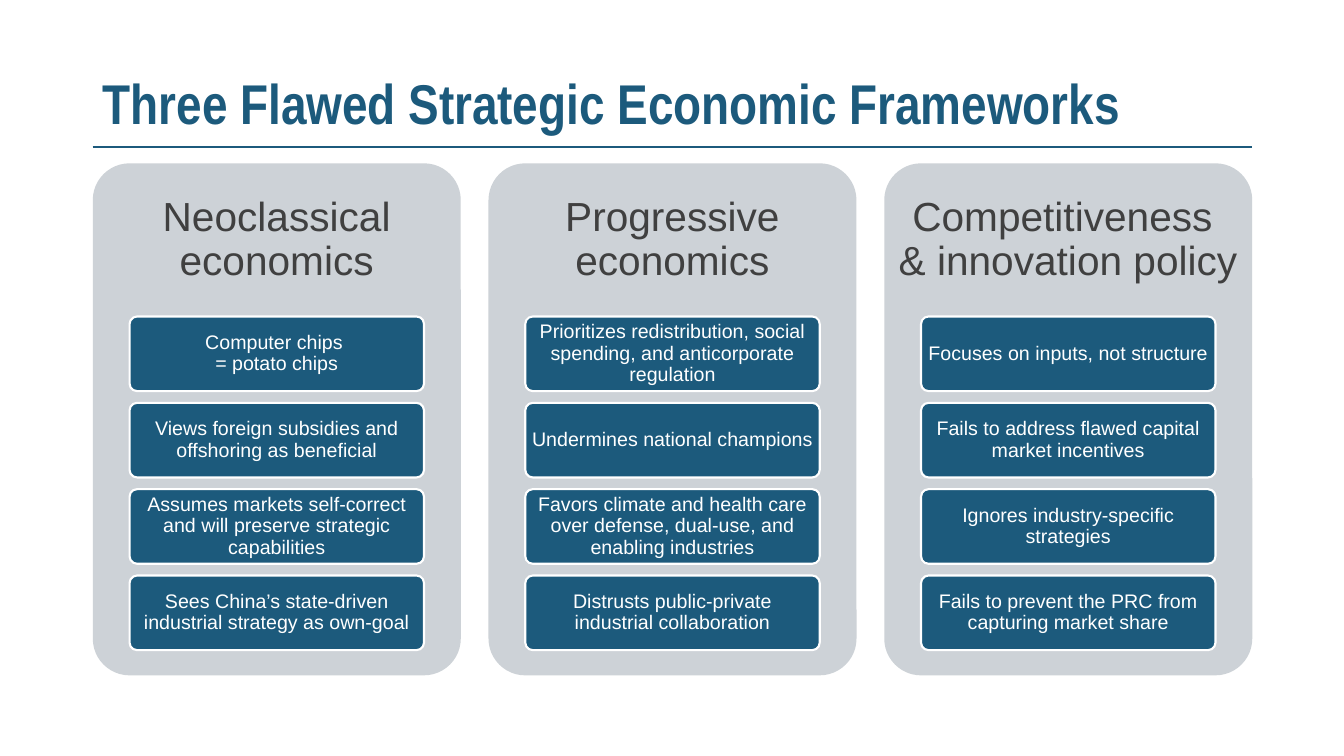
import lxml.etree
import pptx
import pptx.dml.color
import pptx.enum.shapes
import pptx.enum.text
import pptx.oxml.ns
import pptx.util

Inches = pptx.util.Inches
ANCHOR = pptx.enum.text.MSO_ANCHOR
ALIGN = pptx.enum.text.PP_ALIGN

FRAMEWORKS = {
    "Neoclassical economics": [
        "Computer chips \v= potato chips",
        "Views foreign subsidies and offshoring as beneficial",
        "Assumes markets self-correct and will preserve strategic capabilities",
        "Sees China’s state-driven industrial strategy as own-goal",
    ],
    "Progressive economics": [
        "Prioritizes redistribution, social spending, and anticorporate regulation",
        "Undermines national champions",
        "Favors climate and health care over defense, dual-use, and enabling industries",
        "Distrusts public-private industrial collaboration",
    ],
    "Competitiveness \v& innovation policy": [
        "Focuses on inputs, not structure",
        "Fails to address flawed capital market incentives",
        "Ignores industry-specific strategies",
        "Fails to prevent the PRC from capturing market share",
    ],
}


class FrameworkSlide:
    """Draws styled elements on one slide."""

    COLORS = {"blue": "1C5A7C", "panel": "CDD2D7", "heading": "404040", "white": "FFFFFF"}
    FORMATS = {
        "title": {"name": "Arial Narrow", "size": pptx.util.Pt(40), "bold": True},
        "heading": {"name": "Arial", "size": pptx.util.Pt(29)},
        "point": {"name": "Arial", "size": pptx.util.Pt(14)},
    }

    def __init__(self, deck):
        self.slide = deck.slides.add_slide(deck.slide_layouts[6])

    def color(self, name):
        return pptx.dml.color.RGBColor.from_string(self.COLORS[name])

    def label(self, holder, words, style, color, anchor, align, inset_x, inset_y):
        frame = holder.text_frame
        settings = {
            "word_wrap": True,
            "vertical_anchor": anchor,
            "margin_left": Inches(inset_x),
            "margin_right": Inches(inset_x),
            "margin_top": Inches(inset_y),
            "margin_bottom": Inches(inset_y),
        }
        for key, value in settings.items():
            setattr(frame, key, value)
        paragraph = frame.paragraphs[0]
        paragraph.text = words
        paragraph.alignment = align
        paragraph.line_spacing = 0.9
        for run in paragraph.runs:
            for key, value in self.FORMATS[style].items():
                setattr(run.font, key, value)
            run.font.color.rgb = self.color(color)
        size = str(int(self.FORMATS[style]["size"].pt * 100))
        for line_break in paragraph._p.findall(pptx.oxml.ns.qn("a:br")):
            lxml.etree.SubElement(line_break, pptx.oxml.ns.qn("a:rPr"), sz=size)

    def text(self, place, *text_style):
        holder = self.slide.shapes.add_textbox(*map(Inches, place))
        self.label(holder, *text_style)

    def rounded(self, place, fill, outline=None):
        card = self.slide.shapes.add_shape(
            pptx.enum.shapes.MSO_SHAPE.ROUNDED_RECTANGLE, *map(Inches, place))
        card.adjustments[0] = 0.1
        card.shadow.inherit = False
        card.fill.solid()
        card.fill.fore_color.rgb = self.color(fill)
        if outline:
            card.line.color.rgb = self.color(outline)
            card.line.width = pptx.util.Pt(1.5)
        else:
            card.line.fill.background()
        return card

    def rule(self, *ends):
        rule = self.slide.shapes.add_connector(
            pptx.enum.shapes.MSO_CONNECTOR.STRAIGHT, *map(Inches, ends))
        rule.line.color.rgb = self.color("blue")
        rule.line.width = pptx.util.Pt(1.25)
        lxml.etree.SubElement(rule._element.spPr, pptx.oxml.ns.qn("a:effectLst"))

    def framework(self, left, width, heading, points):
        top, heading_height, card_width = 1.62, 1.52, 2.92
        card_left = left + (width - card_width) / 2
        card_pitch = 2.57 / (len(points) - 1)
        self.rounded((left, top, width, 5.08), "panel")
        self.text((left, top, width, heading_height), heading, "heading", "heading",
                  ANCHOR.MIDDLE, ALIGN.CENTER, 0.12, 0.12)
        for row, point in enumerate(points):
            card_top = top + heading_height + row * card_pitch
            card = self.rounded((card_left, card_top, card_width, 0.74), "blue", "white")
            self.label(card, point, "point", "white",
                       ANCHOR.MIDDLE, ALIGN.CENTER, 0.04, 0.03)


def main():
    deck = pptx.Presentation()
    deck.slide_width, deck.slide_height = Inches(13.33), Inches(7.5)
    page = FrameworkSlide(deck)
    left, width, panel_width = 0.92, 11.5, 3.65
    panel_pitch = (width - panel_width) / (len(FRAMEWORKS) - 1)
    page.rule(left, 1.46, left + width, 1.46)
    page.text((left, 0.4, width, 1), "Three Flawed Strategic Economic Frameworks",
              "title", "blue", ANCHOR.BOTTOM, ALIGN.LEFT, 0.1, 0.05)
    for column, (heading, points) in enumerate(FRAMEWORKS.items()):
        page.framework(left + column * panel_pitch, panel_width, heading, points)
    deck.save("out.pptx")


if __name__ == "__main__":
    main()
